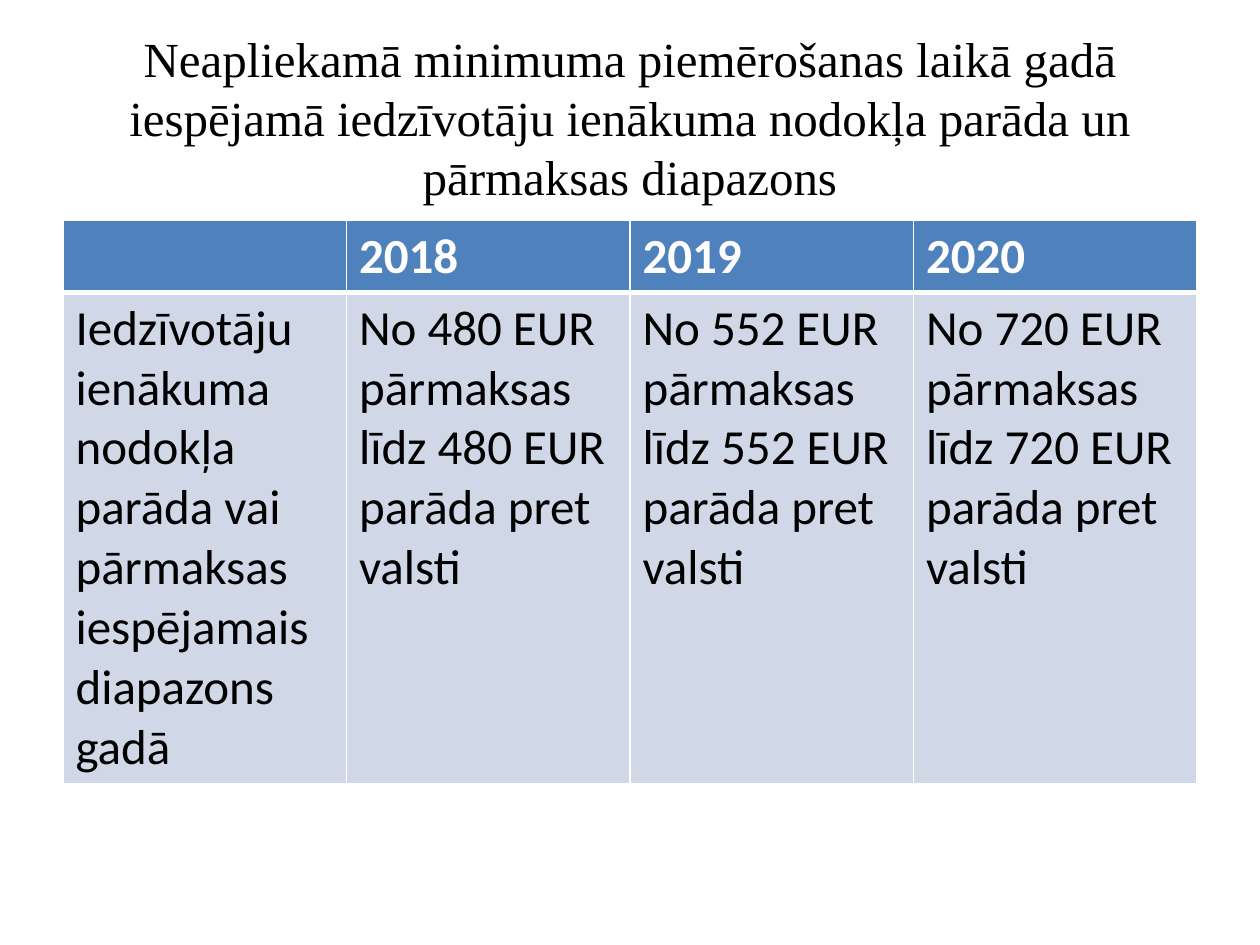
"""Build a slide with a table of yearly income tax debt and overpayment ranges."""
from lxml.etree import SubElement
from pptx import Presentation
from pptx.dml.color import RGBColor
from pptx.enum.text import MSO_ANCHOR, PP_ALIGN
from pptx.oxml.ns import qn
from pptx.util import Inches, Pt

COLORS = {"text": "000000", "white": "FFFFFF", "header": "4F81BD", "body": "D0D8E8"}
TITLE = ("Neapliekamā minimuma piemērošanas laikā gadā iespējamā iedzīvotāju "
         "ienākuma nodokļa parāda un pārmaksas diapazons")
LABEL = "Iedzīvotāju ienākuma nodokļa parāda vai pārmaksas iespējamais diapazons gadā"
LIMITS = {"2018": 480, "2019": 552, "2020": 720}


def add_run(p, text, font, color, bold=False):
    r = p.add_run()
    r.text = text
    r.font.name = font
    r.font.size = Pt(28)
    r.font.bold = bold
    r.font.color.rgb = RGBColor.from_string(COLORS[color])


def add_border(cell, side, width):
    ln = SubElement(cell._tc.get_or_add_tcPr(), qn(f"a:ln{side}"), w=str(Pt(width)))
    fill = SubElement(ln, qn("a:solidFill"))
    SubElement(fill, qn("a:srgbClr"), val=COLORS["white"])


prs = Presentation()
prs.slide_width, prs.slide_height = Inches(10), Inches(7.5)
s = prs.slides.add_slide(prs.slide_layouts[6])

sp = s.shapes.add_textbox(Inches(0.5), Inches(0.3), Inches(9), Inches(1.25))
tf = sp.text_frame
tf.word_wrap = True
tf.vertical_anchor = MSO_ANCHOR.MIDDLE
p = tf.paragraphs[0]
p.alignment = PP_ALIGN.CENTER
add_run(p, TITLE, "Times New Roman", "text")

rows = [
    ["", *LIMITS],
    [LABEL, *(f"No {n} EUR pārmaksas līdz {n} EUR parāda pret valsti"
              for n in LIMITS.values())],
]
table = s.shapes.add_table(2, 4, Inches(0.5), Inches(1.75), Inches(9), Inches(4.47)).table
for row, height in zip(table.rows, (0.57, 3.9)):
    row.height = Inches(height)

for i, texts in enumerate(rows):
    header = i == 0
    for j, text in enumerate(texts):
        cell = table.cell(i, j)
        for side in "LRTB":
            thick = side == ("B" if header else "T")
            add_border(cell, side, 3 if thick else 1)
        cell.fill.solid()
        cell.fill.fore_color.rgb = RGBColor.from_string(COLORS["header" if header else "body"])
        if text:
            add_run(cell.text_frame.paragraphs[0], text, "Calibri",
                    "white" if header else "text", header)

prs.save("out.pptx")
